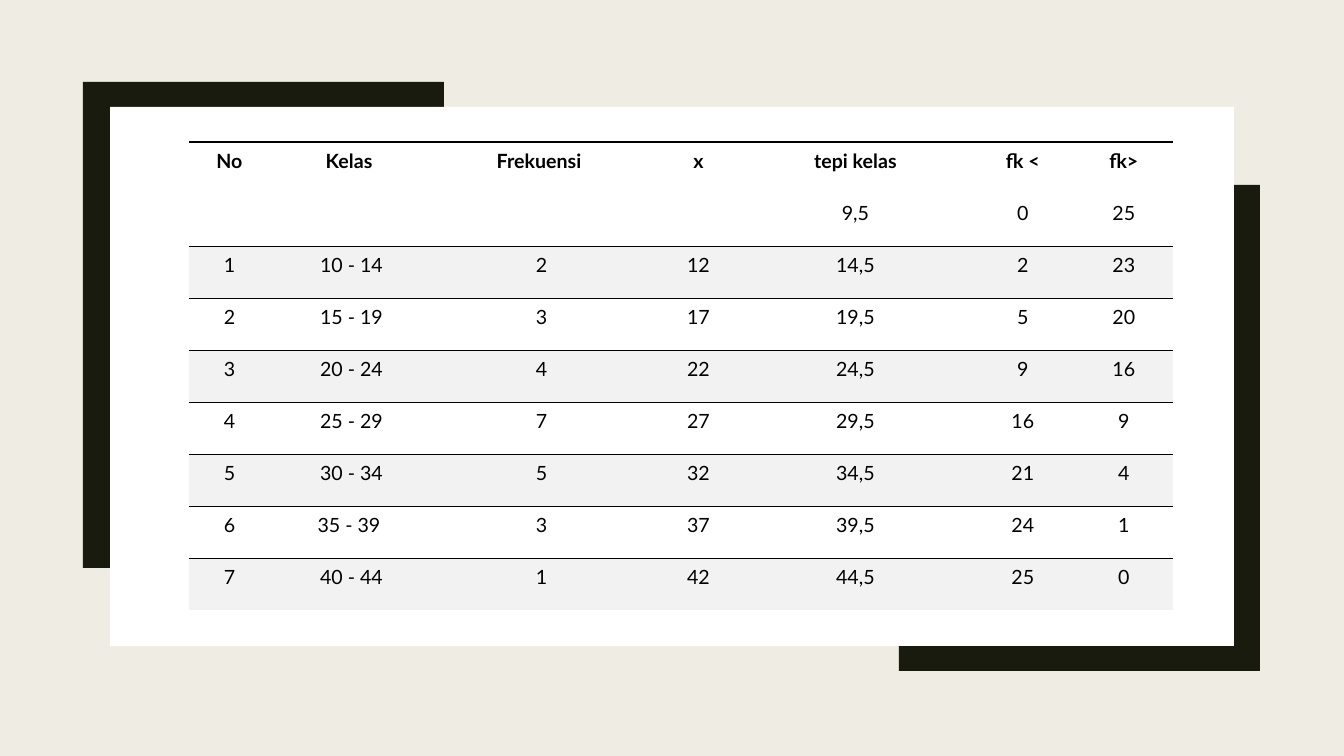
from pptx import Presentation
from pptx import util as u
from pptx.dml.color import RGBColor
from pptx.enum import shapes, text
from pptx.oxml import parse_xml
from pptx.oxml.ns import nsdecls, qn

THEME = {
    "font": "Lato", "size": 14, "ink": "000000", "paper": "EFEDE3",
    "card": "FFFFFF", "frame": "191B0E", "band": "F2F2F2",
    "head": 2.25, "rule": 0.5, "plain": "{2D5ABB26-0587-4C30-8999-92F81FD0307C}",
}

ROWS = [
    ("No", "Kelas ", "Frekuensi ", "x", "tepi kelas", "fk <", "fk>"),
    ("", "", "", "", "9,5", "0", "25"),
    ("1", "10 - 14", "2", "12", "14,5", "2", "23"),
    ("2", "15 - 19", "3", "17", "19,5", "5", "20"),
    ("3", "20 - 24", "4", "22", "24,5", "9", "16"),
    ("4", "25 - 29", "7", "27", "29,5", "16", "9"),
    ("5", "30 - 34", "5", "32", "34,5", "21", "4"),
    ("6", "35 - 39 ", "3", "37", "39,5", "24", "1"),
    ("7", "40 - 44", "1", "42", "44,5", "25", "0"),
]
COLS = (88, 156, 224, 90, 224, 111, 91)
ROW = 52
LEFT, TOP = 189, 142
INSETS = {"left": 0, "top": 3, "right": 7, "bottom": 21}
CARD = (110, 107, 1124, 539)
LOWER = [(1215, 185), (1260, 185), (1260, 671), (899, 671), (899, 629), (1215, 629)]
UPPER = [(1343 - x, 753 - y) for x, y in LOWER]
SCALE = 12192000 / 1344


def px(n):
    return u.Emu(round(n * SCALE))


def color(name):
    return RGBColor.from_string(THEME[name])


def paint(shape, name):
    shape.shadow.inherit = False
    shape.fill.solid()
    shape.fill.fore_color.rgb = color(name)
    shape.line.fill.background()


def bracket(group, points):
    pen = group.shapes.build_freeform(*points[0], scale=SCALE)
    pen.add_line_segments(points[1:], close=True)
    paint(pen.convert_to_shape(), "frame")


def rule(cell, width):
    line = parse_xml(
        f'<a:lnT {nsdecls("a")} w="{u.Pt(width)}"><a:solidFill>'
        f'<a:srgbClr val="{THEME["ink"]}"/></a:solidFill></a:lnT>')
    cell._tc.get_or_add_tcPr().insert(0, line)


def write(cell, words, bold):
    for side, gap in INSETS.items():
        setattr(cell, f"margin_{side}", px(gap))
    cell.vertical_anchor = text.MSO_ANCHOR.BOTTOM
    para = cell.text_frame.paragraphs[0]
    para.alignment = text.PP_ALIGN.CENTER
    run = para.add_run()
    run.text = words
    run.font.name = THEME["font"]
    run.font.size = u.Pt(THEME["size"])
    run.font.bold = bold
    run.font.color.rgb = color("ink")


def fill_table(slide):
    frame = slide.shapes.add_table(
        len(ROWS), len(COLS), px(LEFT), px(TOP), px(sum(COLS)), px(ROW * len(ROWS)))
    table = frame.table
    table.first_row = table.horz_banding = False
    table._tbl.tblPr.find(qn("a:tableStyleId")).text = THEME["plain"]
    for col, width in zip(table.columns, COLS):
        col.width = px(width)
    for r, row in enumerate(ROWS):
        table.rows[r].height = px(ROW)
        band = r >= 2 and r % 2 == 0
        for c, words in enumerate(row):
            cell = table.cell(r, c)
            if words:
                write(cell, words, r == 0)
            if band:
                cell.fill.solid()
                cell.fill.fore_color.rgb = color("band")
            else:
                cell.fill.background()
            if r == 0 or band:
                rule(cell, THEME["rule" if band else "head"])


def main():
    deck = Presentation()
    deck.slide_width, deck.slide_height = px(1344), px(756)
    slide = deck.slides.add_slide(deck.slide_layouts[6])
    slide.background.fill.solid()
    slide.background.fill.fore_color.rgb = color("paper")
    group = slide.shapes.add_group_shape()
    for points in (LOWER, UPPER):
        bracket(group, points)
    card = slide.shapes.add_shape(shapes.MSO_SHAPE.RECTANGLE, *map(px, CARD))
    paint(card, "card")
    fill_table(slide)
    deck.save("out.pptx")


if __name__ == "__main__":
    main()
